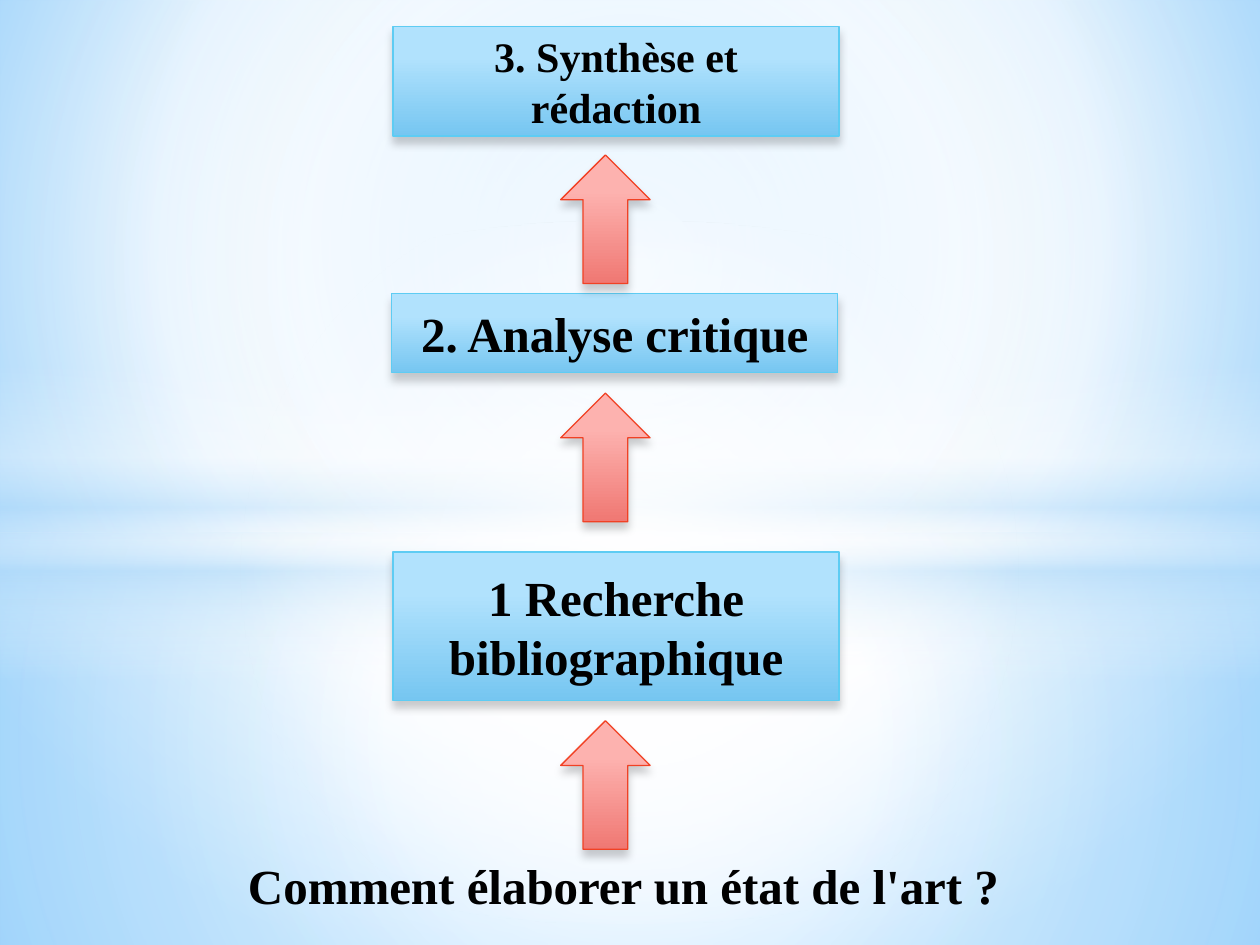
import pptx
import pptx.util
import pptx.dml.color
import pptx.enum.shapes
import pptx.enum.text
import pptx.oxml
import pptx.oxml.ns

KIND = pptx.enum.shapes.MSO_SHAPE
FONT = "Times New Roman"
BLUE = [(28, "B1E2FD"), (100, "76C6F1")]
RED = [(28, "FDB2AF"), (100, "F07873")]
MID = (50, 50, 50, 50)
inch = pptx.util.Inches


def color(code):
    return pptx.dml.color.RGBColor.from_string(code)


def xml(body):
    return pptx.oxml.parse_xml(body.replace(">", f" {pptx.oxml.ns.nsdecls('a')}>", 1))


def blend(fill, root, stops, focus=None):
    """Gradient of (place, colour[, opacity]) stops: radial with a focus, else downward."""
    fill.gradient()
    old = next(root.iter(pptx.oxml.ns.qn("a:gradFill")))
    marks = ""
    for place, code, *rest in stops:
        alpha = f'<a:alpha val="{rest[0] * 1000}"/>' if rest else ""
        marks += f'<a:gs pos="{place * 1000}"><a:srgbClr val="{code}">{alpha}</a:srgbClr></a:gs>'
    if focus:
        sides = " ".join(f'{side}="{share * 1000}"' for side, share in zip("ltrb", focus))
        way = f'<a:path path="circle"><a:fillToRect {sides}/></a:path>'
    else:
        way = '<a:lin ang="5400000" scaled="0"/>'
    old.getparent().replace(old, xml(
        f'<a:gradFill rotWithShape="1"><a:gsLst>{marks}</a:gsLst>{way}</a:gradFill>'))


def shape(slide, kind, box, stops, focus=None):
    item = slide.shapes.add_shape(kind, *map(inch, box))
    item.shadow.inherit = False
    item.line.fill.background()
    blend(item.fill, item._element.spPr, stops, focus)
    return item


def raised(slide, kind, box, stops, edge):
    """Outlined shape with a soft shadow below it."""
    item = shape(slide, kind, box, stops)
    item.line.color.rgb = color(edge)
    item.line.width = pptx.util.Pt(0.75)
    glow = item._element.spPr.find(pptx.oxml.ns.qn("a:effectLst"))
    glow.append(xml(
        '<a:outerShdw blurRad="63500" dist="50800" dir="5400000" rotWithShape="0">'
        '<a:srgbClr val="000000"><a:alpha val="20000"/></a:srgbClr></a:outerShdw>'))
    return item


def write(frame, text, size, align):
    para = frame.paragraphs[0]
    para.alignment = align
    run = para.add_run()
    run.text = text
    run.font.name = FONT
    run.font.size = pptx.util.Pt(size)
    run.font.bold = True
    run.font.color.rgb = color("000000")


def step(slide, left, top, height, text, size):
    item = raised(slide, KIND.RECTANGLE, (left, top, 3.54, height), BLUE, "5ECCF3")
    item.text_frame.word_wrap = True
    item.text_frame.vertical_anchor = pptx.enum.text.MSO_ANCHOR.MIDDLE
    write(item.text_frame, text, size, pptx.enum.text.PP_ALIGN.CENTER)


def arrow(slide, top):
    raised(slide, KIND.UP_ARROW, (4.45, top, 0.71, 1.02), RED, "F14124")


def label(slide, box, text):
    frame = slide.shapes.add_textbox(*map(inch, box)).text_frame
    frame.word_wrap = False
    frame.auto_size = pptx.enum.text.MSO_AUTO_SIZE.SHAPE_TO_FIT_TEXT
    write(frame, text, 28, pptx.enum.text.PP_ALIGN.LEFT)


def scene(slide, wide, high):
    """Sky, ground, horizon band and central light."""
    blend(slide.background.fill, slide._element,
          [(0, "9ED5FF"), (60, "FFFFFF"), (100, "5BB9FF")], (20, 10, 20, 60))
    split = 4.23
    shape(slide, KIND.RECTANGLE, (0, split, wide, high - split),
          [(0, "FFFFFF", 91), (37, "FFFFFF", 76), (100, "B4DCFA", 79)], MID)
    shape(slide, KIND.RECTANGLE, (0, 0, wide, split),
          [(0, "FFFFFF", 89), (48, "FFFFFF", 62), (100, "B4DCFA", 79)], MID)
    shape(slide, KIND.RECTANGLE, (0, 2.9, wide, 2.5),
          [(0, "FFFFFF", 0), (29, "FFFFFF", 30), (45, "B4DCFA", 40),
           (55, "FFFFFF", 26), (65, "B4DCFA", 60), (100, "FFFFFF", 0)])
    shape(slide, KIND.OVAL, (0, 1.75, wide, 5.58),
          [(0, "FFFFFF", 100), (54, "FFFFFF", 0)], MID)


def main():
    deck = pptx.Presentation()
    wide, high = 10, 7.5
    deck.slide_width, deck.slide_height = inch(wide), inch(high)
    slide = deck.slides.add_slide(deck.slide_layouts[6])
    scene(slide, wide, high)

    # Steps, from the first at the bottom to the last at the top
    step(slide, 3.12, 4.38, 1.18, "1 Recherche bibliographique", 28)
    step(slide, 3.11, 2.33, 0.63, "2. Analyse critique", 28)
    step(slide, 3.12, 0.21, 0.87, "3. Synthèse et rédaction", 24)

    # Question and the arrows rising from it
    label(slide, (1.87, 6.74, 6.23, 0.57), "Comment élaborer un état de l'art ?")
    for top in (5.72, 3.12, 1.23):
        arrow(slide, top)

    deck.save("out.pptx")


if __name__ == "__main__":
    main()
